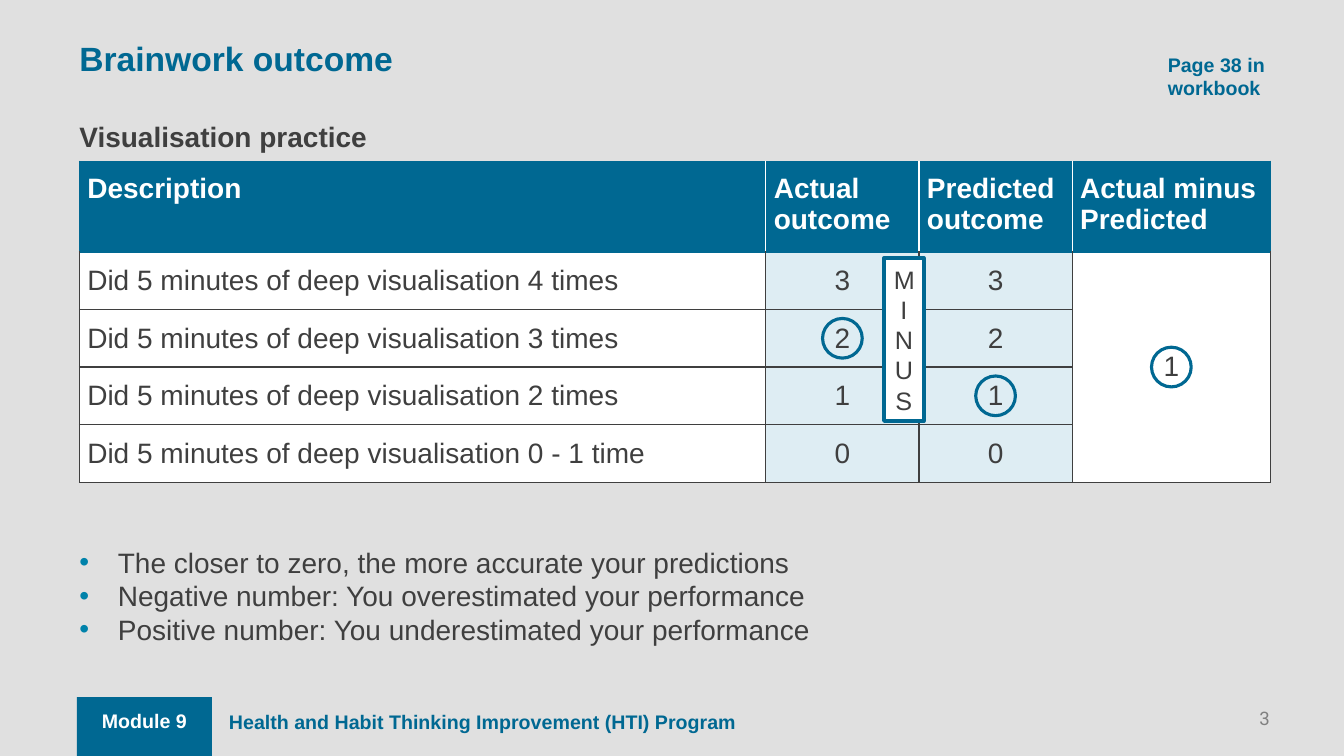
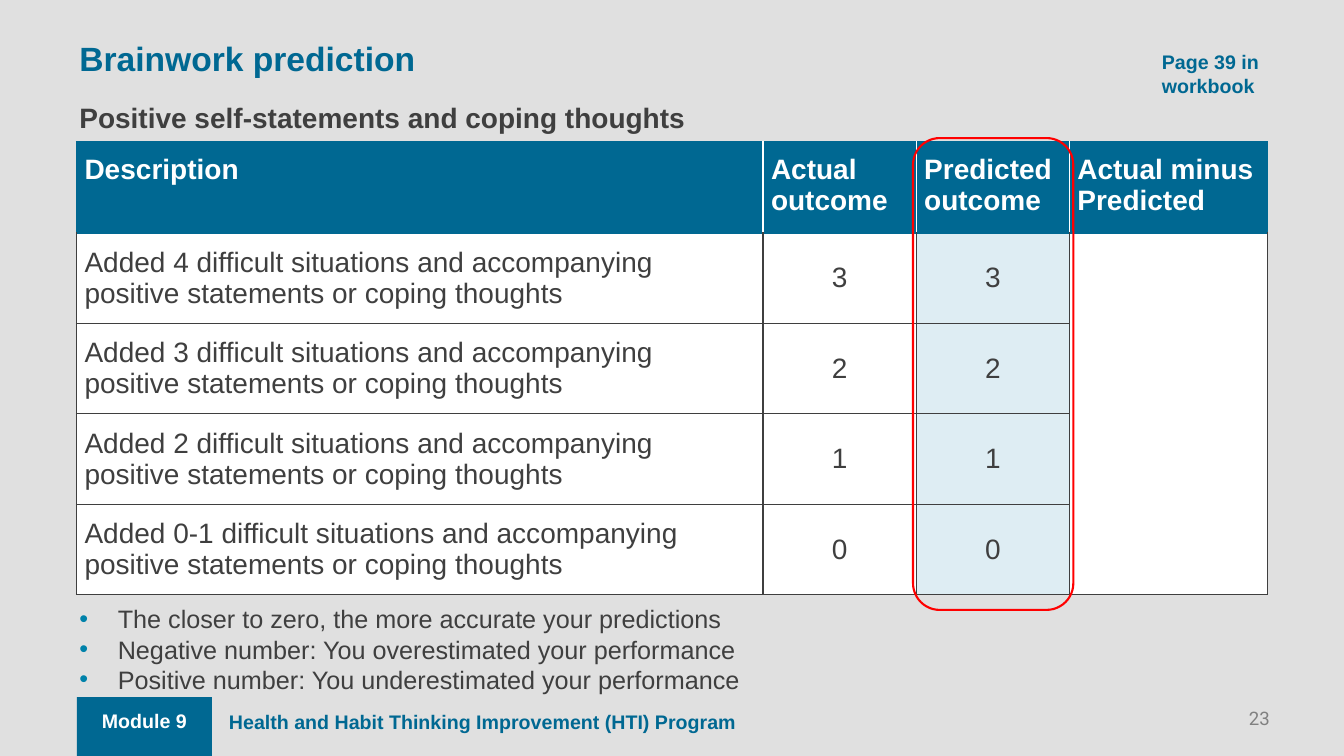
from lxml import etree
from pptx import Presentation
from pptx.dml.color import RGBColor
from pptx.enum.shapes import MSO_SHAPE
from pptx.enum.text import MSO_ANCHOR, MSO_AUTO_SIZE, PP_ALIGN
from pptx.oxml.ns import qn
from pptx.util import Cm, Pt

RECT, ROUND, OVAL = MSO_SHAPE.RECTANGLE, MSO_SHAPE.ROUNDED_RECTANGLE, MSO_SHAPE.OVAL
LEFT, MID, RIGHT = PP_ALIGN.LEFT, PP_ALIGN.CENTER, PP_ALIGN.RIGHT
TOP, CENTER = MSO_ANCHOR.TOP, MSO_ANCHOR.MIDDLE

BLUE, PALE, WHITE = "006892", "DEEDF3", "FFFFFF"
DARK, GREY, RED = "3F3F3F", "808080", "FF0000"
BACK, DOT = "E0E0E0", "0082AA"

COLS = [17.3, 3.86, 3.86, 5]
HEADS = ["Description", "Actual outcome", "Predicted outcome", "Actual minus Predicted"]
HEAD = 2.29
RING = 1
POINTS = [
    "The closer to zero, the more accurate your predictions",
    "Negative number: You overestimated your performance",
    "Positive number: You underestimated your performance",
]
NORMAL, NONE, FLUSH = (0.25, 0.13, 0.25, 0.13), (0, 0, 0, 0), (0, 0.13, 0.25, 0.13)

SLIDES = [
    dict(
        title="Brainwork outcome", topic="Visualisation practice", topic_y=2.87,
        page="Page 38 in workbook", page_at=(29.18, 1.2), number="3",
        table_at=(2, 4.06), row=1.45, result="1", pale=(1, 2),
        tasks=["Did 5 minutes of deep visualisation " + n
               for n in ("4 times", "3 times", "2 times", "0 - 1 time")],
        points_y=13.74, points_size=20,
        rings=[(1, 1.5), (2, 2.5), (3, 2)], minus=(22.28, 6.5, 1, 4.11), frame=None,
    ),
    dict(
        title="Brainwork prediction",
        topic="Positive self-statements and coping thoughts", topic_y=2.41,
        page="Page 39 in workbook", page_at=(29.03, 1.14), number="23",
        table_at=(1.93, 3.58), row=2.28, result="", pale=(2,),
        tasks=[f"Added {n} difficult situations and accompanying "
               "positive statements or coping thoughts"
               for n in ("4", "3", "2", "0-1")],
        points_y=15.21, points_size=18,
        rings=[], minus=None, frame=(23.01, 3.48, 4.04, 11.89),
    ),
]


def paint(fill, tone):
    fill.solid()
    fill.fore_color.rgb = RGBColor.from_string(tone)


def write(frame, lines, size, tone, bold=False, align=LEFT, font="Arial"):
    """Fill a text frame with one run per paragraph."""
    frame.word_wrap = True
    for i, line in enumerate(lines):
        para = frame.paragraphs[0] if i == 0 else frame.add_paragraph()
        para.alignment = align
        run = para.add_run()
        run.text = line
        run.font.name, run.font.size, run.font.bold = font, Pt(size), bold
        paint(run.font.fill, tone)


prs = Presentation()
prs.slide_width, prs.slide_height = Cm(33.87), Cm(19.05)
paint(prs.slide_master.background.fill, BACK)

for data in SLIDES:
    slide = prs.slides.add_slide(prs.slide_layouts[5])
    shapes = slide.shapes

    title = shapes.title
    title.left, title.top, title.width, title.height = Cm(2), Cm(0.87), Cm(22.66), Cm(1.2)
    frame = title.text_frame
    frame.auto_size, frame.vertical_anchor = MSO_AUTO_SIZE.NONE, CENTER
    frame.margin_left = frame.margin_right = frame.margin_top = frame.margin_bottom = 0
    write(frame, [data["title"]], 24, BLUE, True)

    # Table
    x, y = data["table_at"]
    row = data["row"]
    grid = [HEADS] + [[task, str(3 - i), str(3 - i), "" if i else data["result"]]
                      for i, task in enumerate(data["tasks"])]
    table = shapes.add_table(len(grid), len(COLS), Cm(x), Cm(y), Cm(sum(COLS)),
                             Cm(HEAD + 4 * row)).table
    table.horz_banding = False
    for c, width in enumerate(COLS):
        table.columns[c].width = Cm(width)
    for r, texts in enumerate(grid):
        table.rows[r].height = Cm(row if r else HEAD)
        for c, text in enumerate(texts):
            cell = table.cell(r, c)
            cell.margin_left = cell.margin_right = Cm(0.2)
            cell.margin_top = cell.margin_bottom = Cm(0.3)
            cell.vertical_anchor = CENTER if r else TOP
            if r:
                edges = dict(L=DARK, R=DARK, T=BLUE if r == 1 else DARK, B=DARK)
                tone = PALE if c in data["pale"] else WHITE
            else:
                edges = dict(L=WHITE if c else BLUE, R=WHITE if c < 3 else BLUE, T=BLUE, B=BLUE)
                tone = BLUE
            props = cell._tc.get_or_add_tcPr()
            for side, edge in edges.items():
                line = etree.SubElement(props, qn("a:ln" + side), w=str(Pt(1)))
                solid = etree.SubElement(line, qn("a:solidFill"))
                etree.SubElement(solid, qn("a:srgbClr"), val=edge)
            paint(cell.fill, tone)
            if text:
                write(cell.text_frame, [text], 20, DARK if r else WHITE, not r,
                      MID if r and c else LEFT)
    table.cell(1, 3).merge(table.cell(4, 3))

    # Outlined marks over the table
    marks = []
    for c, step in data["rings"]:
        left = x + sum(COLS[:c]) + COLS[c] / 2 - RING / 2
        marks.append((OVAL, (left, y + HEAD + step * row - RING / 2, RING, RING), BLUE, 2.25, ""))
    if data["minus"]:
        marks.append((RECT, data["minus"], BLUE, 2.75, "MINUS"))
    if data["frame"]:
        marks.append((ROUND, data["frame"], RED, 1.5, ""))
    for kind, box, tone, weight, text in marks:
        mark = shapes.add_shape(kind, *map(Cm, box))
        mark.shadow.inherit = False
        paint(mark.line.fill, tone)
        mark.line.width = Pt(weight)
        if text:
            paint(mark.fill, WHITE)
            write(mark.text_frame, [text], 18, DARK, align=MID)
        else:
            mark.fill.background()

    # Footer tab
    tab = shapes.add_shape(RECT, Cm(1.94), Cm(17.57), Cm(3.4), Cm(1.48))
    tab.shadow.inherit = False
    paint(tab.fill, BLUE)
    tab.line.fill.background()
    tab.text_frame.vertical_anchor = TOP
    tab.text_frame.margin_top = Cm(0.29)
    write(tab.text_frame, ["Module 9"], 14, WHITE, True, MID)

    # Text boxes
    notes = [
        ((5.52, 17.75, 20, 1.2), NORMAL,
         (["Health and Habit Thinking Improvement (HTI) Program"], 14, BLUE, True)),
        ((26.92, 17.81, 5.08, 0.51), NONE,
         ([data["number"]], 13.3, GREY, False, RIGHT, "Roboto")),
        ((*data["page_at"], 3.51, 1.45), NORMAL, ([data["page"]], 14, BLUE, True)),
        ((2, data["topic_y"], 22.73, 1.12), FLUSH, ([data["topic"]], 20, DARK, True)),
        ((2, data["points_y"], 30, 3.2), NONE, (POINTS, data["points_size"], DARK)),
    ]
    for box, pads, words in notes:
        frame = shapes.add_textbox(*map(Cm, box)).text_frame
        (frame.margin_left, frame.margin_top,
         frame.margin_right, frame.margin_bottom) = map(Cm, pads)
        write(frame, *words)
        if words[0] is POINTS:
            for para in frame.paragraphs:
                props = para._p.get_or_add_pPr()
                props.set("marL", str(Cm(0.97)))
                props.set("indent", str(-Cm(0.97)))
                color = etree.SubElement(props, qn("a:buClr"))
                etree.SubElement(color, qn("a:srgbClr"), val=DOT)
                etree.SubElement(props, qn("a:buFont"), typeface="Arial")
                etree.SubElement(props, qn("a:buChar"), char="•")

prs.save("out.pptx")
